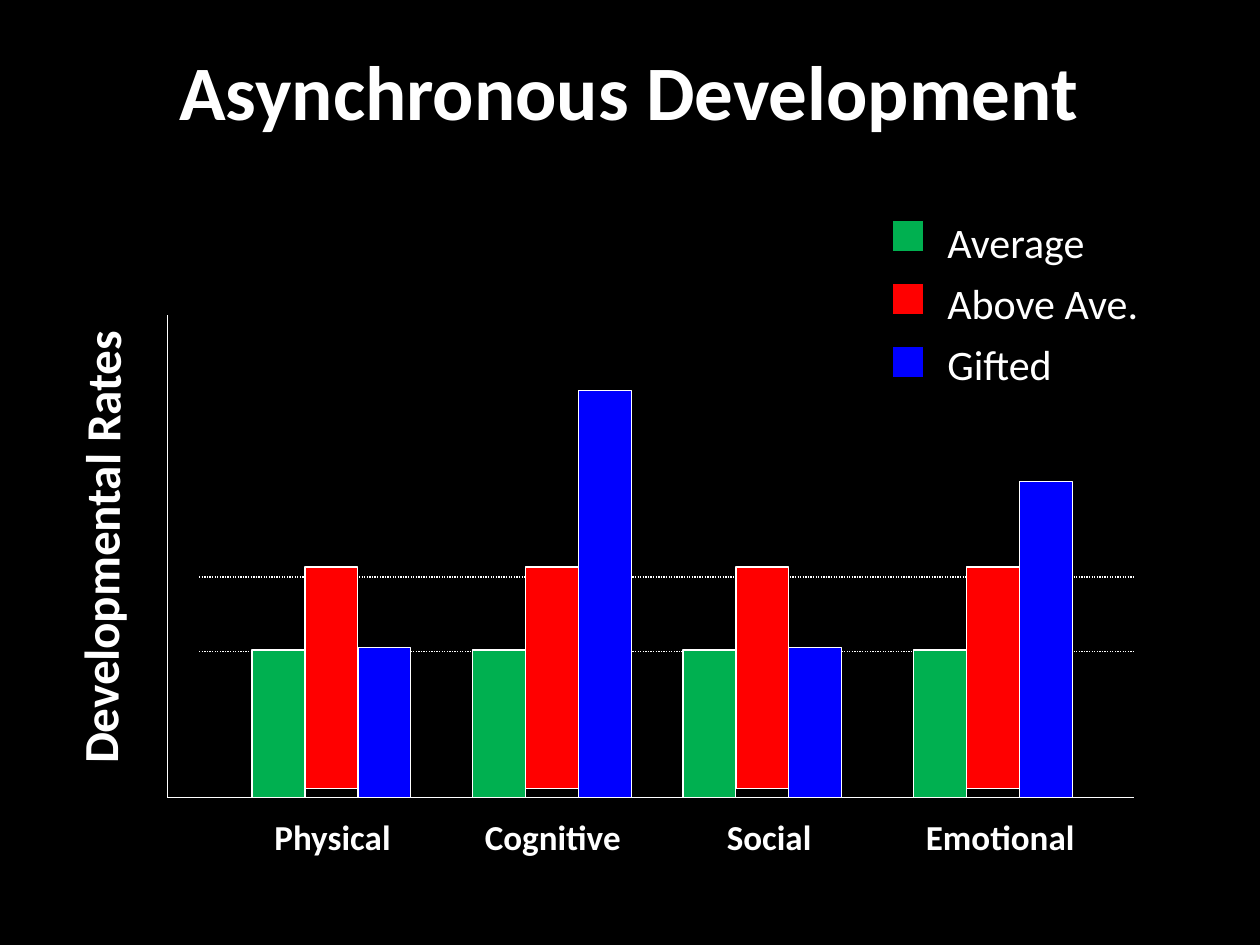
from dataclasses import dataclass

from lxml.etree import SubElement
from pptx import Presentation
from pptx.dml.color import RGBColor
from pptx.enum.dml import MSO_LINE
from pptx.enum.shapes import MSO_CONNECTOR, MSO_SHAPE
from pptx.enum.text import MSO_ANCHOR, PP_ALIGN
from pptx.oxml.ns import qn
from pptx.slide import Slide
from pptx.util import Inches, Pt

COLORS = {
    "background": "000000",
    "foreground": "FFFFFF",
    "average": "00B050",
    "above": "FF0000",
    "gifted": "0000FF",
}
BASELINE = 6.33
BAR_WIDTH = 0.42
AXIS_LEFT, AXIS_RIGHT, AXIS_TOP = 1.33, 9, 2.5
GUIDE_LEFT = 1.58


@dataclass(frozen=True)
class Box:
    left: float
    top: float
    width: float
    height: float

    def lengths(self) -> list:
        return [Inches(v) for v in (self.left, self.top, self.width, self.height)]


@dataclass(frozen=True)
class Domain:
    name: str
    bars_left: float
    label_left: float
    label_width: float
    gifted_height: float


@dataclass(frozen=True)
class Level:
    name: str
    color: str
    bottom: float
    heights: list[float]


DOMAINS = [
    Domain("Physical", 2, 2.08, 1.17, 1.19),
    Domain("Cognitive", 3.75, 3.75, 1.33, 3.23),
    Domain("Social", 5.42, 5.67, 0.88, 1.19),
    Domain("Emotional", 7.25, 7.25, 1.42, 2.51),
]
LEVELS = [
    Level("Average", "average", BASELINE, [1.17] * len(DOMAINS)),
    Level("Above Ave.", "above", 6.26, [1.76] * len(DOMAINS)),
    Level("Gifted", "gifted", BASELINE, [d.gifted_height for d in DOMAINS]),
]


def rgb(name: str) -> RGBColor:
    return RGBColor.from_string(COLORS[name])


def draw_line(slide: Slide, start: tuple, end: tuple, dotted: bool = False) -> None:
    ends = [Inches(v) for v in (*start, *end)]
    rule = slide.shapes.add_connector(MSO_CONNECTOR.STRAIGHT, *ends)
    rule.line.color.rgb = rgb("foreground")
    rule.line.width = Pt(0.75)
    if dotted:
        rule.line.dash_style = MSO_LINE.ROUND_DOT
    SubElement(rule._element.spPr, qn("a:effectLst"))


def draw_block(slide: Slide, box: Box, color: str, outline: str) -> None:
    block = slide.shapes.add_shape(MSO_SHAPE.RECTANGLE, *box.lengths())
    block.shadow.inherit = False
    block.fill.solid()
    block.fill.fore_color.rgb = rgb(color)
    block.line.color.rgb = rgb(outline)
    block.line.width = Pt(0.75)


def draw_text(
    slide: Slide,
    box: Box,
    lines: list[str],
    size: float,
    bold: bool = True,
    rotation: float = 0,
    frame_format: dict | None = None,
    paragraph_format: dict | None = None,
) -> None:
    caption = slide.shapes.add_textbox(*box.lengths())
    caption.rotation = rotation
    frame = caption.text_frame
    for name, value in {"word_wrap": True, **(frame_format or {})}.items():
        setattr(frame, name, value)
    frame.text = "\n".join(lines)
    font_format = {"name": "Calibri", "size": Pt(size), "bold": bold}
    for paragraph in frame.paragraphs:
        for name, value in (paragraph_format or {}).items():
            setattr(paragraph, name, value)
        for run in paragraph.runs:
            for name, value in font_format.items():
                setattr(run.font, name, value)
            run.font.color.rgb = rgb("foreground")


def draw_axes(slide: Slide) -> None:
    origin = (AXIS_LEFT, BASELINE)
    draw_line(slide, origin, (AXIS_RIGHT, BASELINE))
    draw_line(slide, origin, (AXIS_LEFT, AXIS_TOP))
    draw_text(slide, Box(-1.2, 3.88, 3.99, 0.57), ["Developmental Rates"], 28, rotation=270.3)
    for height in (5.17, 4.58):
        draw_line(slide, (GUIDE_LEFT, height), (AXIS_RIGHT, height), dotted=True)
    for domain in DOMAINS:
        label_box = Box(domain.label_left, 6.42, domain.label_width, 0.44)
        draw_text(slide, label_box, [domain.name], 20)


def draw_bars(slide: Slide) -> None:
    for order, level in enumerate(LEVELS):
        for domain, height in zip(DOMAINS, level.heights):
            left = domain.bars_left + order * BAR_WIDTH
            bar = Box(left, level.bottom - height, BAR_WIDTH, height)
            draw_block(slide, bar, level.color, "foreground")


def draw_legend(slide: Slide) -> None:
    for order, level in enumerate(LEVELS):
        key = Box(7.08, 1.75 + order * 0.5, 0.25, 0.25)
        draw_block(slide, key, level.color, "background")
    draw_text(
        slide,
        Box(7.42, 1.67, 2, 1.5),
        [level.name for level in LEVELS],
        24,
        bold=False,
        paragraph_format={"space_before": Pt(6)},
    )


def main() -> None:
    deck = Presentation()
    deck.slide_width, deck.slide_height = Inches(10), Inches(7.5)
    slide = deck.slides.add_slide(deck.slide_layouts[6])
    slide.background.fill.solid()
    slide.background.fill.fore_color.rgb = rgb("background")
    draw_axes(slide)
    draw_bars(slide)
    draw_legend(slide)
    draw_text(
        slide,
        Box(0.33, 0.25, 9.33, 0.92),
        ["Asynchronous Development"],
        44,
        frame_format={"vertical_anchor": MSO_ANCHOR.MIDDLE},
        paragraph_format={"alignment": PP_ALIGN.CENTER},
    )
    deck.save("out.pptx")


if __name__ == "__main__":
    main()
